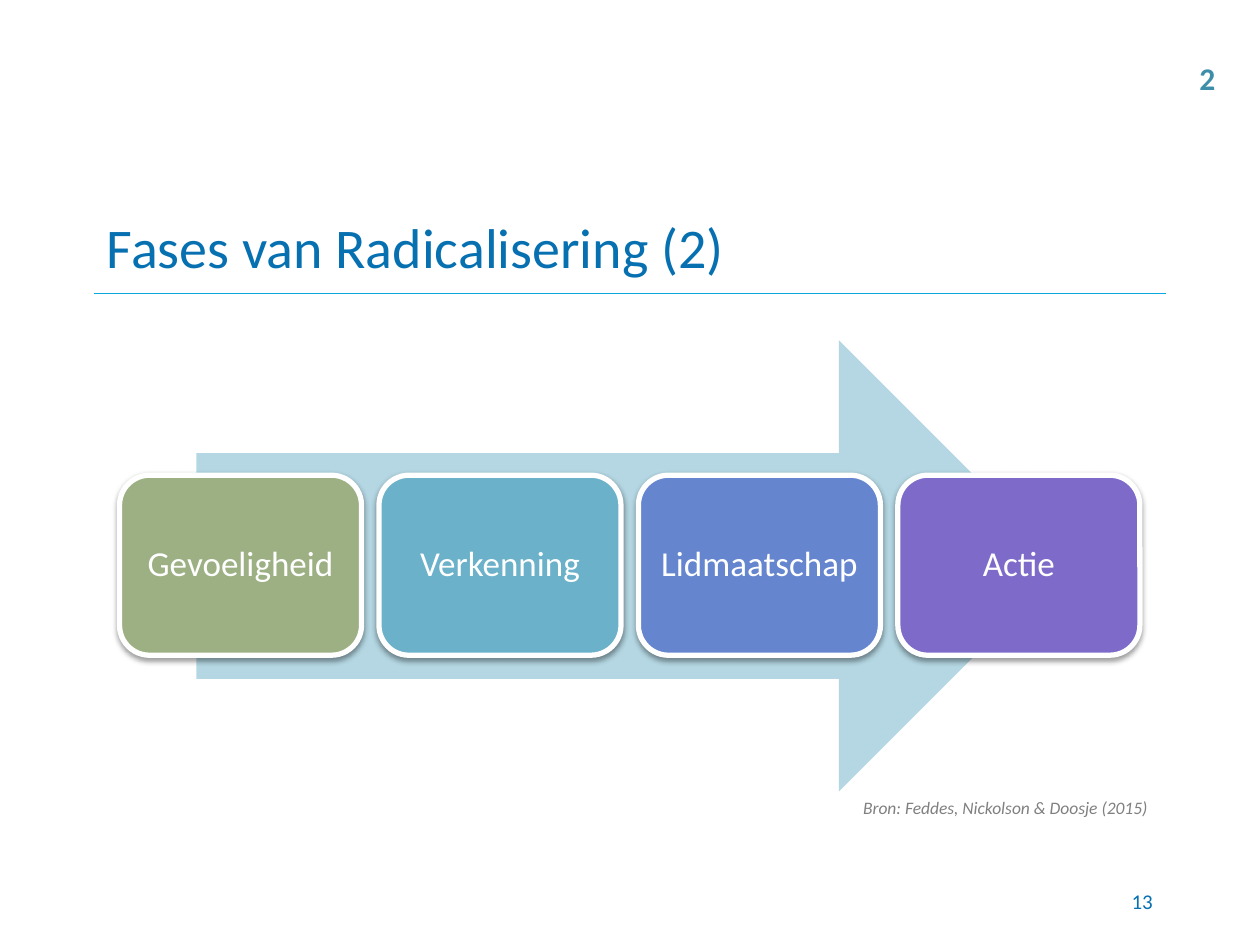
from lxml import etree
from pptx import Presentation
from pptx import util as u
from pptx.dml.color import RGBColor
from pptx.enum import shapes, text
from pptx.oxml.ns import qn

FONT = "Calibri"
WHITE = RGBColor(0xFF, 0xFF, 0xFF)
BLUE = RGBColor(0x07, 0x70, 0xB1)
RULE_BLUE = RGBColor(0x0B, 0xA7, 0xDF)
TEAL = RGBColor(0x3E, 0x8E, 0xA9)
GREY = RGBColor(0x80, 0x80, 0x80)
GREEN = RGBColor(0x9C, 0xB0, 0x84)
AQUA = RGBColor(0x6B, 0xB1, 0xC9)
INDIGO = RGBColor(0x65, 0x85, 0xCF)
PURPLE = RGBColor(0x7E, 0x6B, 0xC9)

PHASES = [
    ("Gevoeligheid", GREEN),
    ("Verkenning", AQUA),
    ("Lidmaatschap", INDIGO),
    ("Actie", PURPLE),
]
PHASE_LEFT, PHASE_TOP = 2.41, 9.58
PHASE_WIDTH, PHASE_HEIGHT = 4.88, 3.63
PHASE_STEP = 5.23


class SlideBuilder:
    """Holds the font and the current slide; lengths are centimetres."""

    def __init__(self, page, font=FONT):
        self.page = page
        self.font = font

    def add_words(self, frame, words, size, color, align=text.PP_ALIGN.LEFT,
                  bold=False, italic=False):
        para = frame.paragraphs[0]
        para.alignment = align
        span = para.add_run()
        span.text = words
        span.font.name = self.font
        span.font.size = u.Pt(size)
        span.font.bold = bold
        span.font.italic = italic
        span.font.color.rgb = color
        return para

    def title(self, words, left, top, width, height):
        box = self.page.shapes.title
        box.left, box.top = u.Cm(left), u.Cm(top)
        box.width, box.height = u.Cm(width), u.Cm(height)
        box.text_frame.vertical_anchor = text.MSO_ANCHOR.MIDDLE
        self.add_words(box.text_frame, words, 32, BLUE)

    def label(self, words, left, top, width, height, size, color,
              anchor=text.MSO_ANCHOR.TOP, wrap=True, **style):
        box = self.page.shapes.add_textbox(
            u.Cm(left), u.Cm(top), u.Cm(width), u.Cm(height))
        box.text_frame.word_wrap = wrap
        box.text_frame.vertical_anchor = anchor
        self.add_words(box.text_frame, words, size, color, **style)

    def rule(self, left, top, right, color, weight):
        line = self.page.shapes.add_connector(
            shapes.MSO_CONNECTOR.STRAIGHT,
            u.Cm(left), u.Cm(top), u.Cm(right), u.Cm(top))
        line.line.color.rgb = color
        line.line.width = u.Pt(weight)
        etree.SubElement(line._element.spPr, qn("a:effectLst"))

    def shape(self, kind, left, top, width, height, fill):
        box = self.page.shapes.add_shape(
            kind, u.Cm(left), u.Cm(top), u.Cm(width), u.Cm(height))
        box.shadow.inherit = False
        box.fill.solid()
        box.fill.fore_color.rgb = fill
        return box

    def arrow(self, left, top, width, height, fill, opacity):
        box = self.shape(shapes.MSO_SHAPE.RIGHT_ARROW,
                         left, top, width, height, fill)
        box.line.fill.background()
        color = box._element.spPr.find(qn("a:solidFill"))[0]
        etree.SubElement(color, qn("a:alpha"), val=str(opacity * 1000))

    def phase(self, words, left, fill):
        box = self.shape(shapes.MSO_SHAPE.ROUNDED_RECTANGLE, left, PHASE_TOP,
                         PHASE_WIDTH, PHASE_HEIGHT, fill)
        box.line.color.rgb = WHITE
        box.line.width = u.Pt(3)
        self.soft_shadow(box)
        frame = box.text_frame
        frame.word_wrap = True
        frame.vertical_anchor = text.MSO_ANCHOR.MIDDLE
        frame.margin_left = frame.margin_right = u.Cm(0.2)
        frame.margin_top = frame.margin_bottom = u.Cm(0.2)
        para = self.add_words(frame, words, 20, WHITE, text.PP_ALIGN.CENTER)
        para.line_spacing = 0.9

    def soft_shadow(self, box):
        effects = box._element.spPr.find(qn("a:effectLst"))
        shadow = etree.SubElement(
            effects, qn("a:outerShdw"), blurRad=str(u.Pt(3.1)),
            dist=str(u.Pt(1.6)), dir="5400000", rotWithShape="0")
        color = etree.SubElement(shadow, qn("a:srgbClr"), val="000000")
        etree.SubElement(color, qn("a:alpha"), val="38000")


def main():
    deck = Presentation()
    deck.slide_width, deck.slide_height = u.Cm(25.4), u.Cm(19.05)
    page = deck.slides.add_slide(deck.slide_layouts[5])
    builder = SlideBuilder(page)

    # Title and the rule below it
    builder.rule(1.9, 5.92, 23.5, RULE_BLUE, 0.75)
    builder.title("Fases van Radicalisering (2)", 1.9, 4.01, 21.6, 1.9)

    # Arrow with the four phases on top
    builder.arrow(3.96, 6.86, 17.5, 9.1, AQUA, 50)
    for index, (name, color) in enumerate(PHASES):
        builder.phase(name, PHASE_LEFT + index * PHASE_STEP, color)

    # Corner number, source and page number
    builder.label("2", 23.93, 1.07, 0.84, 1.02, 18, TEAL,
                  wrap=False, bold=True)
    builder.label("Bron: Feddes, Nickolson & Doosje (2015)",
                  17.15, 15.95, 6.78, 0.69, 10, GREY, italic=True)
    builder.label("13", 18.21, 17.65, 5.28, 1.02, 12, BLUE,
                  anchor=text.MSO_ANCHOR.MIDDLE, align=text.PP_ALIGN.RIGHT)

    deck.save("out.pptx")


if __name__ == "__main__":
    main()
